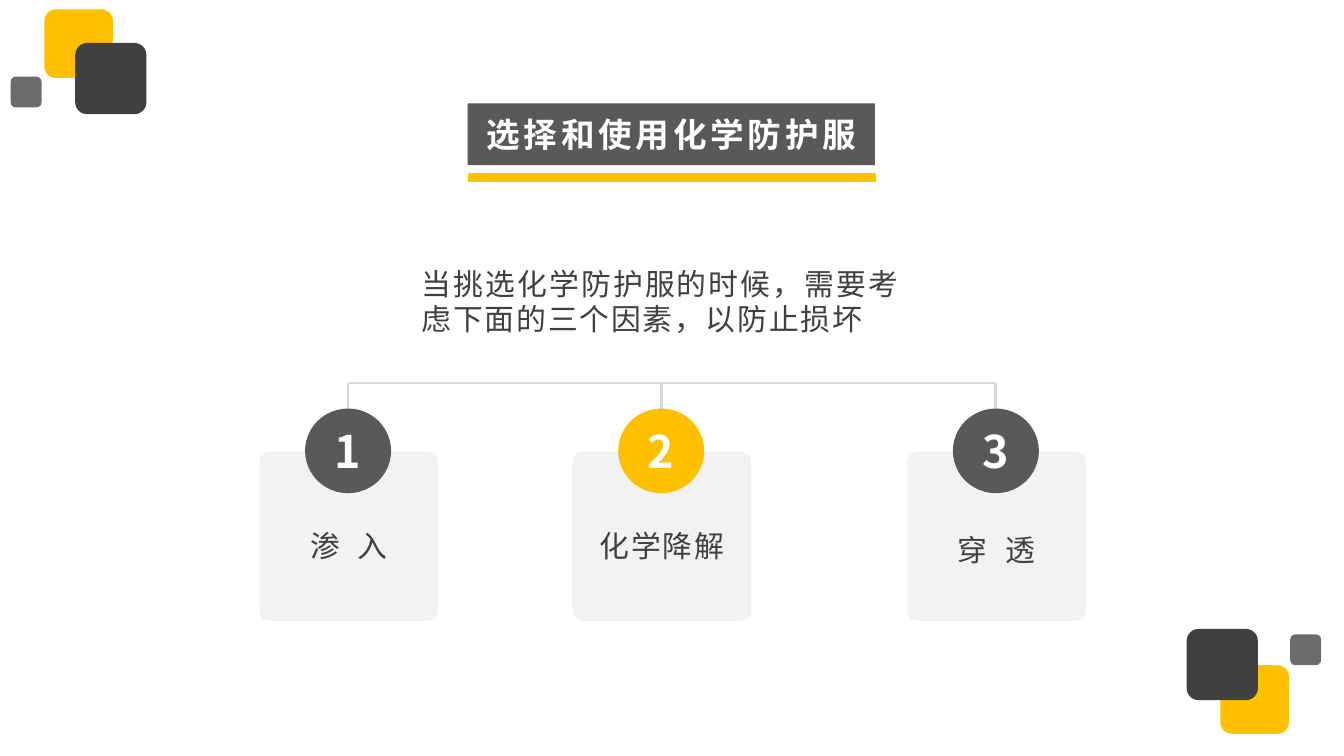
from dataclasses import dataclass

from lxml.etree import SubElement
from pptx import Presentation
from pptx.dml.color import RGBColor
from pptx.enum.shapes import MSO_CONNECTOR, MSO_SHAPE
from pptx.enum.text import MSO_ANCHOR, PP_ALIGN
from pptx.oxml.ns import qn
from pptx.util import Inches, Pt

COLORS = {
    "gold": "FFC000", "dark": "404040", "gray": "595959",
    "pale": "F2F2F2", "rule": "D9D9D9", "white": "FFFFFF",
}
FONT = "Noto Sans CJK SC"
HEAD = {"size": Pt(18), "bold": True}
BADGE = {"size": Pt(24), "bold": True}
BODY = {"size": Pt(16), "bold": False}


@dataclass
class Block:
    left: float
    top: float
    side: float
    color: str
    alpha: int = 100


@dataclass
class Factor:
    mid: float
    color: str
    words: list[str]
    top: float = 3.88


BLOCKS = [
    Block(0.33, 0.07, 0.51, "gold"),
    Block(0.56, 0.32, 0.53, "dark"),
    Block(0.08, 0.57, 0.23, "dark", 77),
    Block(9.08, 4.95, 0.51, "gold"),
    Block(8.83, 4.68, 0.53, "dark"),
    Block(9.6, 4.72, 0.23, "dark", 77),
]
FACTORS = [
    Factor(2.59, "gray", ["渗", "入"]),
    Factor(4.92, "gold", ["化学降解"]),
    Factor(7.41, "gray", ["穿", "透"], 3.91),
]

# Widescreen page, 16 to 9
deck = Presentation()
deck.slide_width = Inches(10)
deck.slide_height = Inches(10 * 9 / 16)
slide = deck.slides.add_slide(deck.slide_layouts[6])
shapes = slide.shapes


def tint(name: str) -> RGBColor:
    return RGBColor.from_string(COLORS[name])


def add_form(kind, left: float, top: float, width: float, height: float,
             color: str, alpha: int = 100):
    form = shapes.add_shape(kind, Inches(left), Inches(top), Inches(width), Inches(height))
    form.shadow.inherit = False
    form.fill.solid()
    form.fill.fore_color.rgb = tint(color)
    form.line.fill.background()
    if alpha < 100:
        hue = form._element.spPr.find(".//" + qn("a:srgbClr"))
        SubElement(hue, qn("a:alpha"), val=str(alpha * 1000))
    return form


def add_rule(left: float, top: float, right: float, low: float,
             color: str, weight: float) -> None:
    rule = shapes.add_connector(MSO_CONNECTOR.STRAIGHT, Inches(left), Inches(top),
                                Inches(right), Inches(low))
    rule.line.color.rgb = tint(color)
    rule.line.width = Pt(weight)
    SubElement(rule._element.spPr, qn("a:effectLst"))


def add_run(para, text: str, style: dict, color: str, gap: float) -> None:
    run = para.add_run()
    run.text = text
    for key, value in style.items():
        setattr(run.font, key, value)
    run.font.name = FONT
    run.font.color.rgb = tint(color)
    props = run._r.get_or_add_rPr()
    props.set("spc", str(int(gap * 100)))
    SubElement(props, qn("a:ea"), typeface=FONT)


def write(form, words: list[str], style: dict, color: str, gap: float = 0,
          align=PP_ALIGN.CENTER, **layout) -> None:
    frame = form.text_frame
    for key, value in {"word_wrap": True, **layout}.items():
        setattr(frame, key, value)
    para = frame.paragraphs[0]
    para.alignment = align
    if style is BODY:
        para.line_spacing = Pt(19)
    for spot, word in enumerate(words):
        if spot:
            # One widely tracked space sets the words apart
            add_run(para, " ", style, color, 5)
        add_run(para, word, style, color, gap)


def add_note(left: float, top: float, width: float, height: float,
             words: list[str], align=PP_ALIGN.CENTER) -> None:
    box = shapes.add_textbox(Inches(left), Inches(top), Inches(width), Inches(height))
    write(box, words, BODY, "dark", 1, align)


# Corner blocks
for block in BLOCKS:
    add_form(MSO_SHAPE.ROUNDED_RECTANGLE, block.left, block.top,
             block.side, block.side, block.color, block.alpha)

# Title with underline
title = add_form(MSO_SHAPE.RECTANGLE, 3.48, 0.77, 3.03, 0.46, "gray")
write(title, ["选择和使用化学防护服"], HEAD, "white", 2,
      vertical_anchor=MSO_ANCHOR.MIDDLE,
      margin_left=Inches(0.12), margin_right=Inches(0.12),
      margin_top=Inches(0.08), margin_bottom=Inches(0.08))
add_rule(3.48, 1.32, 6.52, 1.32, "gold", 5)

# Introduction
add_note(3.04, 1.93, 3.76, 0.64,
         ["当挑选化学防护服的时候，需要考虑下面的三个因素，以防止损坏"], PP_ALIGN.JUSTIFY)

# Bracket over the three factors
add_rule(FACTORS[0].mid, 2.85, FACTORS[-1].mid, 2.85, "rule", 1.5)

# Factor stems, cards, badges and labels
for number, item in enumerate(FACTORS, 1):
    add_rule(item.mid, 3.15, item.mid, 2.85, "rule", 1.5)
    card = add_form(MSO_SHAPE.ROUNDED_RECTANGLE, item.mid - 0.66, 3.36, 1.33, 1.26, "pale")
    card.adjustments[0] = 0.063
    badge = add_form(MSO_SHAPE.OVAL, item.mid - 0.32, 3.04, 0.64, 0.63, item.color)
    write(badge, [str(number)], BADGE, "white", vertical_anchor=MSO_ANCHOR.MIDDLE,
          margin_left=Inches(0.07), margin_right=Inches(0.07),
          margin_top=Inches(0.04), margin_bottom=Inches(0.04))
    add_note(item.mid - 0.66, item.top, 1.33, 0.37, item.words)

deck.save("out.pptx")
